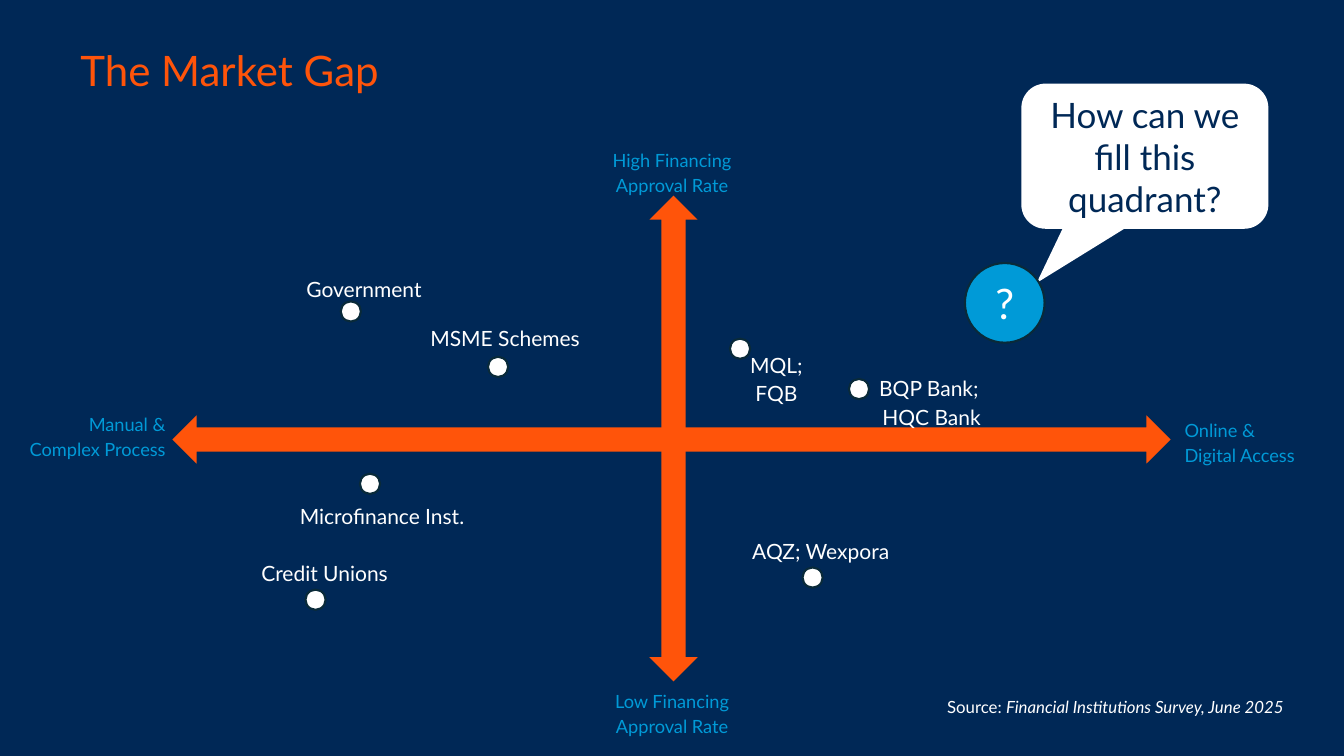
from dataclasses import dataclass

from pptx import Presentation
from pptx.dml.color import RGBColor
from pptx.enum.shapes import MSO_SHAPE
from pptx.enum.text import MSO_ANCHOR, PP_ALIGN
from pptx.shapes.autoshape import Shape
from pptx.slide import Slide
from pptx.util import Inches, Pt

LEFT, CENTER, RIGHT = PP_ALIGN.LEFT, PP_ALIGN.CENTER, PP_ALIGN.RIGHT
TOP, MIDDLE = MSO_ANCHOR.TOP, MSO_ANCHOR.MIDDLE
ARROW = MSO_SHAPE.UP_DOWN_ARROW
OVAL = MSO_SHAPE.OVAL
CALLOUT = MSO_SHAPE.ROUNDED_RECTANGULAR_CALLOUT

FONT = "Lato"
NAVY, ORANGE, BLUE, WHITE, OUTLINE = "002856", "FF540A", "009AD7", "FFFFFF", "092A39"
LABEL_SPACING = 1.14
LABEL_HEIGHT = 0.48
AXIS_LABEL_HEIGHT = 0.54
DOT_SIZE = 0.2

Box = tuple[float, float, float, float]


@dataclass
class AxisLabel:
    text: str
    left: float
    top: float
    width: float
    align: PP_ALIGN


@dataclass
class Lender:
    """A lender's label and the dot that places it on the map."""
    name: str
    left: float
    top: float
    dot_left: float
    dot_top: float
    width: float = 2.12


AXIS_LABELS = [
    AxisLabel("High Financing Approval Rate", 5.76, 1.4, 1.81, CENTER),
    AxisLabel("Low Financing Approval Rate", 5.76, 6.77, 1.81, CENTER),
    AxisLabel("Online & Digital Access", 11.65, 4.08, 1.45, LEFT),
    AxisLabel("Manual & Complex Process", 0.11, 4.02, 1.63, RIGHT),
]

LENDERS = [
    Lender("Government", 2.55, 2.66, 3.38, 2.99),
    Lender("MSME Schemes", 3.95, 3.15, 4.84, 3.54),
    Lender("Microfinance Inst.", 2.73, 4.91, 3.57, 4.7),
    Lender("Credit Unions", 2.16, 5.48, 3.03, 5.85),
    Lender("MQL;\nFQB", 6.64, 3.41, 7.24, 3.36),
    Lender("BQP Bank; \nHQC Bank", 8.05, 3.64, 8.42, 3.76, width=2.38),
    Lender("AQZ; Wexpora", 7.08, 5.26, 7.96, 5.63),
]


def rgb(value: str) -> RGBColor:
    return RGBColor.from_string(value)


def write(shape: Shape, text: str, *, size: float, color: str, align: PP_ALIGN = CENTER,
          spacing: float | None = None, anchor: MSO_ANCHOR = TOP,
          italic_tail: str = "") -> None:
    """Fill a shape with text, one paragraph a line; italic_tail ends the last one."""
    frame = shape.text_frame
    frame.word_wrap = True
    frame.vertical_anchor = anchor
    frame.text = text
    for paragraph in frame.paragraphs:
        paragraph.alignment = align
        if spacing:
            paragraph.line_spacing = spacing
    if italic_tail:
        tail = frame.paragraphs[-1].add_run()
        tail.text = italic_tail
        tail.font.italic = True
    for paragraph in frame.paragraphs:
        for run in paragraph.runs:
            run.font.name = FONT
            run.font.size = Pt(size)
            run.font.color.rgb = rgb(color)


def add_text_box(slide: Slide, box: Box) -> Shape:
    return slide.shapes.add_textbox(*map(Inches, box))


def add_filled_shape(slide: Slide, kind: MSO_SHAPE, box: Box, fill: str,
                     line: str | None = None) -> Shape:
    shape = slide.shapes.add_shape(kind, *map(Inches, box))
    shape.shadow.inherit = False
    shape.fill.solid()
    shape.fill.fore_color.rgb = rgb(fill)
    if line:
        shape.line.color.rgb = rgb(line)
        shape.line.width = Pt(1.5)
    else:
        shape.line.fill.background()
    return shape


def add_axes(slide: Slide) -> None:
    add_filled_shape(slide, ARROW, (6.44, 1.94, 0.48, 4.82), ORANGE)
    horizontal = add_filled_shape(slide, ARROW, (6.42, -0.59, 0.48, 9.9), ORANGE)
    horizontal.rotation = 270
    for label in AXIS_LABELS:
        box = add_text_box(slide, (label.left, label.top, label.width, AXIS_LABEL_HEIGHT))
        write(box, label.text, size=13, color=BLUE, align=label.align, spacing=LABEL_SPACING)


def add_lenders(slide: Slide) -> None:
    for lender in LENDERS:
        box = add_text_box(slide, (lender.left, lender.top, lender.width, LABEL_HEIGHT))
        write(box, lender.name, size=15, color=WHITE, spacing=LABEL_SPACING)
    for lender in LENDERS:
        dot = (lender.dot_left, lender.dot_top, DOT_SIZE, DOT_SIZE)
        add_filled_shape(slide, OVAL, dot, WHITE, OUTLINE)


def add_open_question(slide: Slide) -> None:
    callout = add_filled_shape(slide, CALLOUT, (10.13, 0.83, 2.45, 1.44), WHITE)
    for index, value in enumerate((-0.438, 0.873, 0.167)):
        callout.adjustments[index] = value
    write(callout, "How can we fill this quadrant?", size=25, color=NAVY, anchor=MIDDLE)
    gap = add_filled_shape(slide, OVAL, (9.57, 2.61, 0.79, 0.79), BLUE, OUTLINE)
    write(gap, "?", size=30, color=WHITE, anchor=MIDDLE)


def main() -> None:
    presentation = Presentation()
    presentation.slide_width = Inches(13.33)
    presentation.slide_height = Inches(7.5)
    slide = presentation.slides.add_slide(presentation.slide_layouts[6])
    slide.background.fill.solid()
    slide.background.fill.fore_color.rgb = rgb(NAVY)

    add_axes(slide)
    add_lenders(slide)
    source = add_text_box(slide, (8.75, 6.86, 4.63, 0.3))
    write(source, "Source: ", size=12, color=WHITE,
          italic_tail="Financial Institutions Survey, June 2025")
    title = add_text_box(slide, (0.7, 0.39, 11.43, 0.61))
    write(title, "The Market Gap", size=30, color=ORANGE, align=LEFT)
    add_open_question(slide)
    presentation.save("out.pptx")


if __name__ == "__main__":
    main()
